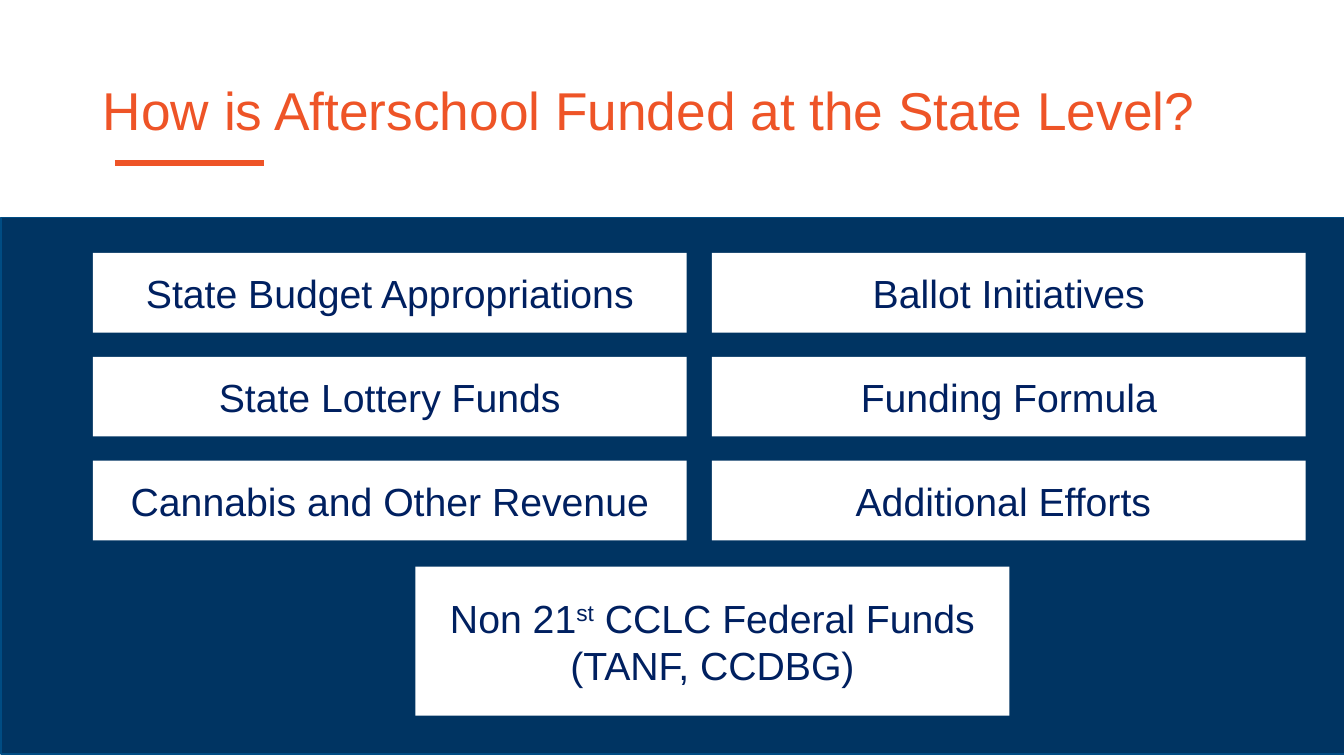
from pptx import Presentation
from pptx.dml.color import RGBColor
from pptx.enum.shapes import MSO_CONNECTOR as Conn, MSO_SHAPE as Shape
from pptx.enum.text import MSO_ANCHOR as Anchor, PP_ALIGN as Align
from pptx.oxml.ns import qn
from pptx.util import Inches, Pt
from lxml import etree

NAVY, ORANGE, INK, WHITE = "003462", "EE5427", "002060", "FFFFFF"


def color(fmt, code):
    fmt.rgb = RGBColor.from_string(code)


def add_box(left, top, width, height, fill, runs=()):
    """Add a plain rectangle; runs holds (text, baseline) pairs."""
    box = slide.shapes.add_shape(
        Shape.RECTANGLE, Inches(left), Inches(top), Inches(width), Inches(height))
    box.shadow.inherit = False
    box.fill.solid()
    color(box.fill.fore_color, fill)
    box.line.fill.background()
    frame = box.text_frame
    frame.word_wrap = True
    frame.vertical_anchor = Anchor.MIDDLE
    para = frame.paragraphs[0]
    para.alignment = Align.CENTER
    for text, base in runs:
        run = para.add_run()
        run.text = text
        run.font.name, run.font.size = "Arial", Pt(28)
        color(run.font.color, INK)
        if base:
            run.font._element.set("baseline", str(base * 1000))
    return box


deck = Presentation()
deck.slide_width, deck.slide_height = Inches(13.33), Inches(7.5)
slide = deck.slides.add_slide(deck.slide_layouts[5])

# Title
title = slide.shapes.title
title.left, title.top = Inches(0.92), Inches(0.4)
title.width, title.height = Inches(11.5), Inches(1.45)
title.text_frame.vertical_anchor = Anchor.MIDDLE
para = title.text_frame.paragraphs[0]
para.alignment, para.line_spacing = Align.LEFT, 0.9
run = para.add_run()
run.text = "How is Afterschool Funded at the State Level?"
run.font.name, run.font.size = "Arial", Pt(38)
color(run.font.color, ORANGE)

# Accent rule under the title
rule = slide.shapes.add_connector(
    Conn.STRAIGHT, Inches(1.14), Inches(1.62), Inches(2.62), Inches(1.62))
rule.line.width = Pt(4)
color(rule.line.color, ORANGE)
etree.SubElement(rule._element.spPr, qn("a:effectLst"))

# Navy band
band = add_box(0.01, 2.16, 13.33, 5.32, NAVY)
band.line.width = Pt(0.85)
color(band.line.color, "004C83")

# Funding sources: two columns of three
LEFT, TOP, WIDE, HIGH = 0.92, 2.51, 5.89, 0.79
COL_STEP, ROW_STEP = 6.14, 1.03
columns = [
    ["State Budget Appropriations", "State Lottery Funds",
     "Cannabis and Other Revenue"],
    ["Ballot Initiatives", "Funding Formula", "Additional Efforts "],
]
for col, names in enumerate(columns):
    for row, name in enumerate(names):
        add_box(LEFT + col * COL_STEP, TOP + row * ROW_STEP, WIDE, HIGH,
                WHITE, [(name, 0)])

# Federal funds below the grid
add_box(4.12, 5.62, WIDE, 1.48, WHITE,
        [("Non 21", 0), ("st", 30), (" CCLC Federal Funds (TANF, CCDBG)", 0)])

deck.save("out.pptx")
